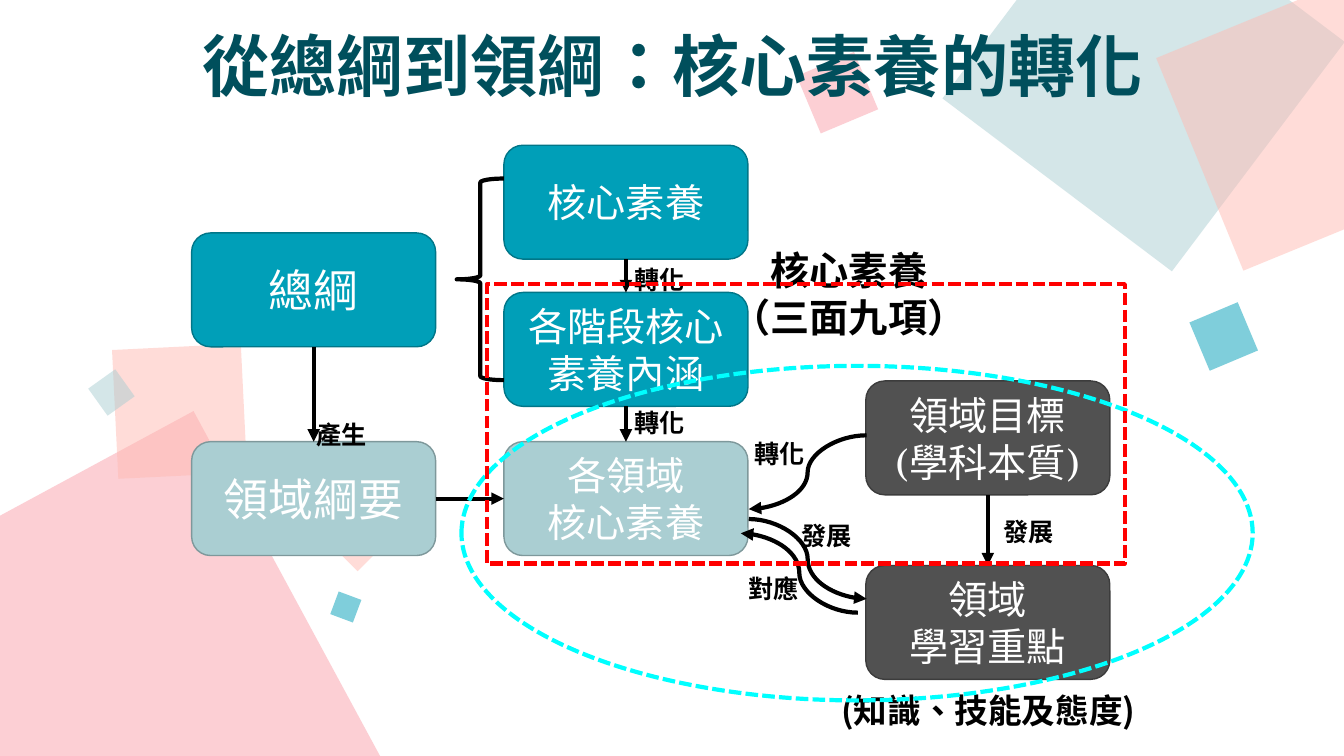
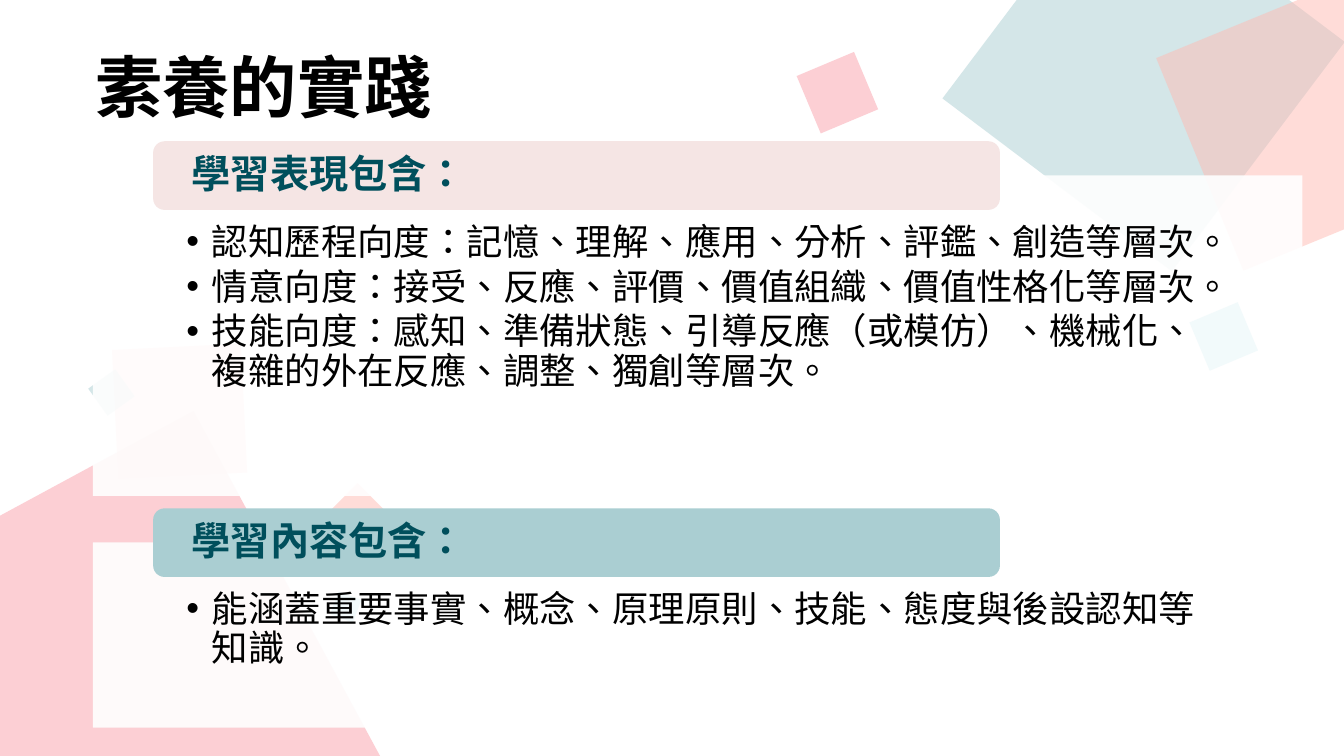
from lxml.etree import SubElement
from pptx import Presentation
from pptx.dml.color import RGBColor
from pptx.enum.dml import MSO_LINE
from pptx.enum.shapes import MSO_CONNECTOR, MSO_SHAPE
from pptx.enum.text import MSO_ANCHOR, PP_ALIGN
from pptx.oxml.ns import qn
from pptx.util import Cm, Pt

RECT, ROUND, OVAL, BRACE = (MSO_SHAPE.RECTANGLE, MSO_SHAPE.ROUNDED_RECTANGLE,
                            MSO_SHAPE.OVAL, MSO_SHAPE.LEFT_BRACE)
STRAIGHT, CURVE = MSO_CONNECTOR.STRAIGHT, MSO_CONNECTOR.CURVE
TOP, MIDDLE = MSO_ANCHOR.TOP, MSO_ANCHOR.MIDDLE
LEFT, CENTER = PP_ALIGN.LEFT, PP_ALIGN.CENTER
DASHED = MSO_LINE.SQUARE_DOT
SITE_TOP, SITE_LEFT, SITE_BOTTOM, SITE_RIGHT = range(4)
SANS, SERIF = "Noto Sans CJK SC", "TeX Gyre Schola"

COLORS = {
    "black": "000000", "white": "FFFFFF", "ink": "004F5C",
    "teal": "009FB8", "teal_edge": "007688",
    "mint": "AACED2", "mint_edge": "7E989B",
    "gray": "515151", "gray_edge": "3C3C3C",
    "pink": "FAA0AA", "coral": "FFBBB3", "blush": "F5E5E4",
    "red": "FF0000", "cyan": "00FFFF",
}
# Shared text formats: font values and paragraph values
TITLE = {"size": Pt(48), "bold": True, "name": SANS}
LABEL = {"size": Pt(18), "bold": True, "name": SERIF}
HEADING = {"size": Pt(28), "bold": True, "name": SANS}
BODY = {"size": Pt(26), "name": SANS}
CENTERED = {"alignment": CENTER}
TIGHT = {"alignment": LEFT, "line_spacing": 0.9}


def add_block(page, kind, place, fill=None, line=None, width=1, alpha=None):
    """Add a shape, or a text box when kind is None; place is in centimetres."""
    place = [Cm(value) for value in place]
    if kind is None:
        return page.shapes.add_textbox(*place)
    block = page.shapes.add_shape(kind, *place)
    block.shadow.inherit = False
    if fill:
        block.fill.solid()
        block.fill.fore_color.rgb = RGBColor.from_string(COLORS[fill])
    else:
        block.fill.background()
    if alpha:
        color = block._element.spPr.find(".//" + qn("a:srgbClr"))
        SubElement(color, qn("a:alpha"), val=str(alpha * 1000))
    if line:
        block.line.color.rgb = RGBColor.from_string(COLORS[line])
        block.line.width = Pt(width)
    else:
        block.line.fill.background()
    return block


def write(box, lines, font, color, layout, anchor=TOP, insets=None, bullet=False):
    """Write one paragraph per line; insets are left, top, right, bottom in cm."""
    frame = box.text_frame
    frame.word_wrap = True
    frame.vertical_anchor = anchor
    if insets:
        for side, value in zip(("left", "top", "right", "bottom"), insets):
            setattr(frame, f"margin_{side}", Cm(value))
    for number, line in enumerate(lines):
        para = frame.add_paragraph() if number else frame.paragraphs[0]
        for key, value in layout.items():
            setattr(para, key, value)
        if bullet:
            settings = para._p.get_or_add_pPr()
            settings.set("marL", str(Cm(0.64)))
            settings.set("indent", str(-Cm(0.64)))
            SubElement(settings, qn("a:buFont"), typeface="Arial")
            SubElement(settings, qn("a:buChar"), char="•")
        span = para.add_run()
        span.text = line
        for key, value in font.items():
            setattr(span.font, key, value)
        span.font.color.rgb = RGBColor.from_string(COLORS[color])
        settings = span._r.get_or_add_rPr()
        settings.set("lang", "zh-TW")
        SubElement(settings, qn("a:ea"), typeface=SANS)


deck = Presentation()
deck.slide_width, deck.slide_height = Cm(33.87), Cm(19.05)
flow, practice = [deck.slides.add_slide(deck.slide_layouts[6]) for _ in range(2)]

# Background squares on both slides: left, top, side, rotation, colour
SQUARES = [
    (-2.36, 12.19, 10.31, 331.6, "pink"),
    (2.9, 8.74, 3.25, 357.2, "coral"),
    (8.23, 12.5, 1.57, 315, "coral"),
    (2.39, 9.47, 0.84, 324.4, "mint"),
    (25.2, -1.85, 7.24, 37, "mint"),
    (30.02, 0.15, 5.79, 337.7, "coral"),
    (20.32, 1.55, 1.57, 337.2, "pink"),
    (30.18, 7.82, 1.32, 337.2, "teal"),
    (8.41, 14.99, 0.61, 290.5, "teal"),
]
for page in (flow, practice):
    for left, top, side, rotation, color in SQUARES:
        square = add_block(page, RECT, (left, top, side, side), color, alpha=50)
        square.rotation = rotation

# Slide 1: boxes of the flow, in three columns
OUTLINE, CORE, FIELD = 4.83, 12.7, 21.82
BOXES = {
    "general": (OUTLINE, 5.87, "teal", 32, ["總綱"]),
    "core": (CORE, 3.66, "teal", 28, ["核心素養"]),
    "stages": (CORE, 7.37, "teal", 28, ["各階段核心素養內涵"]),
    "field_outline": (OUTLINE, 11.13, "mint", 32, ["領域綱要"]),
    "field_core": (CORE, 11.13, "mint", 28, ["各領域", "核心素養"]),
    "goals": (FIELD, 9.6, "gray", 28, ["領域目標", "(學科本質)"]),
    "learning": (FIELD, 14.25, "gray", 28, ["領域", "學習重點"]),
}
boxes = {}
for name, (left, top, color, size, lines) in BOXES.items():
    box = add_block(flow, ROUND, (left, top, 6.15, 2.87), color, color + "_edge")
    write(box, lines, {"size": Pt(size), "name": SERIF}, "white", CENTERED, MIDDLE)
    boxes[name] = box
add_block(flow, BRACE, (11.51, 4.5, 1.19, 5.08), line="black", width=3)

# Arrows: straight ones join boxes, curved ones run between points
JOINS = [
    ("general", SITE_BOTTOM, "field_outline", SITE_TOP),
    ("core", SITE_BOTTOM, "stages", SITE_TOP),
    ("stages", SITE_BOTTOM, "field_core", SITE_TOP),
    ("field_outline", SITE_RIGHT, "field_core", SITE_LEFT),
    ("goals", SITE_BOTTOM, "learning", SITE_TOP),
]
CURVES = [
    (21.84, 10.97, 18.87, 12.83),
    (18.87, 13.08, 21.84, 15.09),
    (21.62, 15.44, 18.67, 13.44),
]
arrows = []
for start, start_site, end, end_site in JOINS:
    arrow = flow.shapes.add_connector(STRAIGHT, 0, 0, 0, 0)
    arrow.begin_connect(boxes[start], start_site)
    arrow.end_connect(boxes[end], end_site)
    arrows.append(arrow)
for points in CURVES:
    arrows.append(flow.shapes.add_connector(CURVE, *[Cm(value) for value in points]))
for arrow in arrows:
    arrow.line.color.rgb = RGBColor.from_string(COLORS["black"])
    arrow.line.width = Pt(3)
    SubElement(arrow.line._get_or_add_ln(), qn("a:tailEnd"), type="triangle")
    SubElement(arrow._element.spPr, qn("a:effectLst"))

# Arrow labels
LABELS = [
    (18.69, 10.59, "轉化"), (19.89, 12.65, "發展"), (24.97, 12.55, "發展"),
    (15.67, 9.8, "轉化"), (15.67, 6.2, "轉化"), (7.65, 10.11, "產生"),
    (18.54, 14, "對應"),
]
for left, top, label in LABELS:
    box = add_block(flow, None, (left, top, 1.9, 1.68))
    write(box, [label], LABEL, "black", CENTERED, MIDDLE)

# Side notes
note = add_block(flow, None, (17.42, 6.07, 7.95, 2.64))
write(note, ["核心素養", "（三面九項）"], HEADING, "black", CENTERED)
caption = add_block(flow, RECT, (20.14, 17.27, 9.53, 1.27), line="white", width=0.75)
write(caption, ["(知識、技能及態度)"], {**HEADING, "size": Pt(24)}, "black", CENTERED)

# Dashed outlines around the field part
for kind, place, color in [
    (OVAL, (11.63, 9.22, 19.94, 8.43), "cyan"),
    (RECT, (12.27, 7.16, 16.08, 7.04), "red"),
]:
    outline = add_block(flow, kind, place, line=color, width=3)
    outline.line.dash_style = DASHED

# Titles
title = add_block(flow, None, (2.34, 0.71, 29.21, 2.97))
write(title, ["從總綱到領綱：核心素養的轉化"], TITLE, "ink", {**TIGHT, **CENTERED})
title = add_block(practice, None, (2.16, 0.66, 16.74, 3.25))
write(title, ["素養的實踐"], TITLE, "black", {**TIGHT, "space_before": Pt(10)}, MIDDLE)

# Slide 2: each panel carries a heading bar on its top edge
PANELS = [
    (4.42, 8.08, "blush", "學習表現包含：", [
        "認知歷程向度：記憶、理解、應用、分析、評鑑、創造等層次。",
        "情意向度：接受、反應、評價、價值組織、價值性格化等層次。",
        "技能向度：感知、準備狀態、引導反應（或模仿）、機械化、"
        "複雜的外在反應、調整、獨創等層次。",
    ]),
    (13.67, 4.67, "mint", "學習內容包含：", [
        "能涵蓋重要事實、概念、原理原則、技能、態度與後設認知等知識。",
    ]),
]
for top, height, color, heading, points in PANELS:
    panel = add_block(practice, RECT, (2.34, top, 30.48, height), "white", alpha=90)
    write(panel, points, BODY, "black", {**TIGHT, "space_after": Pt(4)},
          insets=(2.36, 1.22, 2.36, 0.51), bullet=True)
    bar = add_block(practice, ROUND, (3.86, top - 0.86, 21.34, 1.73), color)
    write(bar, [heading], HEADING, "ink", TIGHT, MIDDLE, (0.89, 0, 0.89, 0))

deck.save("out.pptx")
